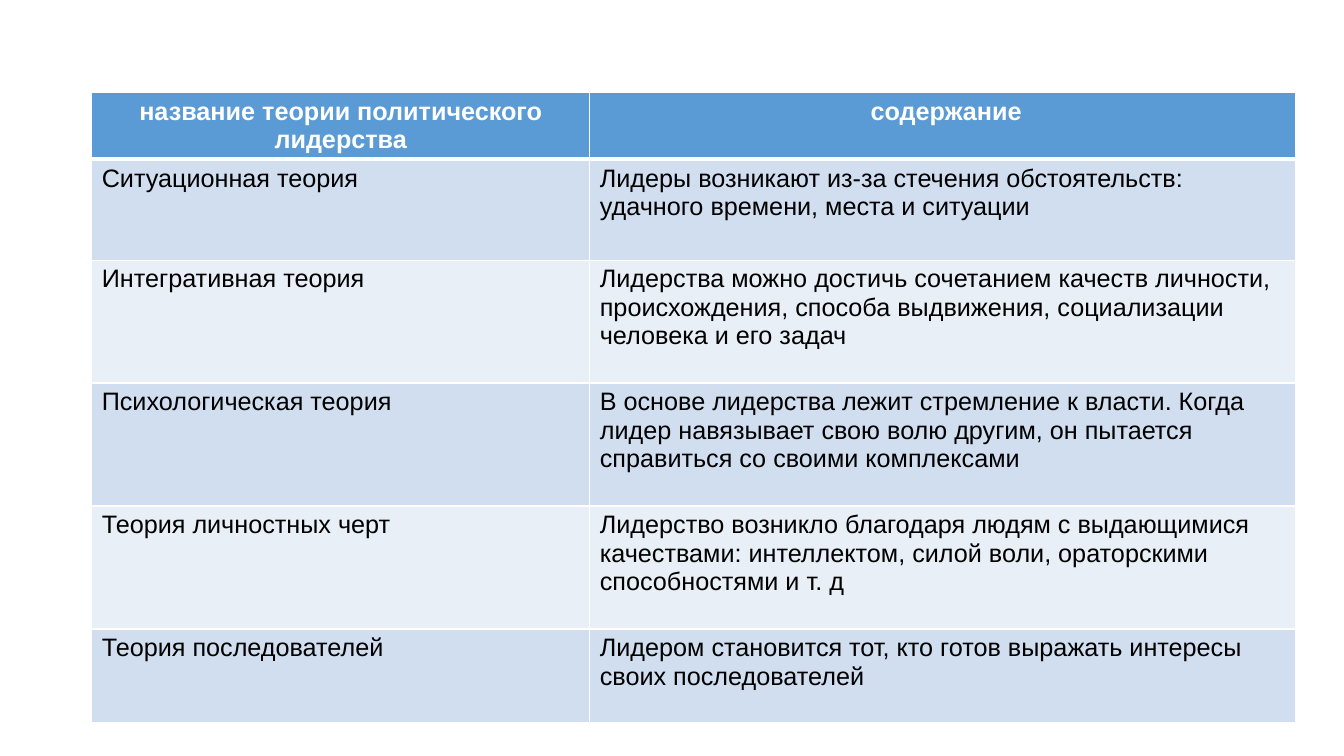
from dataclasses import dataclass

from lxml import etree
from pptx import Presentation
from pptx.dml.color import RGBColor
from pptx.enum.text import PP_ALIGN
from pptx.oxml.ns import qn
from pptx.util import Inches, Pt

LEFT, CENTER = PP_ALIGN.LEFT, PP_ALIGN.CENTER

COL_WIDTHS = [4.94, 7]
ROW_HEIGHTS = [0.65, 1, 1.22, 1.22, 1.22, 0.93]
THEORIES = [
    ("название теории политического лидерства", " содержание"),
    ("Ситуационная теория",
     "Лидеры возникают из-за стечения обстоятельств: удачного времени, места и ситуации"),
    ("Интегративная теория",
     "Лидерства можно достичь сочетанием качеств личности, происхождения, "
     "способа выдвижения, социализации человека и его задач"),
    ("Психологическая теория",
     "В основе лидерства лежит стремление к власти. Когда лидер навязывает "
     "свою волю другим, он пытается справиться со своими комплексами"),
    ("Теория личностных черт",
     "Лидерство возникло благодаря людям с выдающимися качествами: "
     "интеллектом, силой воли, ораторскими способностями и т. д"),
    ("Теория последователей",
     "Лидером становится тот, кто готов выражать интересы своих последователей"),
]


@dataclass(frozen=True)
class Theme:
    font: str = "Arial"
    size: int = 18
    header_fill: str = "5B9BD5"
    bands: tuple = ("D0DEEF", "E9EFF7")
    header_text: str = "FFFFFF"
    body_text: str = "000000"
    border: str = "FFFFFF"
    thin: int = 1
    thick: int = 3


class SlideBuilder:
    def __init__(self, slide, theme):
        self.s = slide
        self.theme = theme

    def table(self, left, top, col_widths, row_heights, rows):
        frame = self.s.shapes.add_table(
            len(rows), len(col_widths), Inches(left), Inches(top),
            Inches(sum(col_widths)), Inches(sum(row_heights)))
        table = frame.table
        for col, width in zip(table.columns, col_widths):
            col.width = Inches(width)
        for row, height in zip(table.rows, row_heights):
            row.height = Inches(height)
        for i, texts in enumerate(rows):
            for j, text in enumerate(texts):
                self.cell(table.cell(i, j), text, i)

    def cell(self, cell, text, row):
        t = self.theme
        header = row == 0
        fill = t.header_fill if header else t.bands[(row - 1) % 2]
        cell.fill.solid()
        cell.fill.fore_color.rgb = RGBColor.from_string(fill)

        # Text
        p = cell.text_frame.paragraphs[0]
        p.alignment = CENTER if header else LEFT
        r = p.add_run()
        r.text = text
        r.font.name = t.font
        r.font.size = Pt(t.size)
        r.font.bold = header
        r.font.color.rgb = RGBColor.from_string(t.header_text if header else t.body_text)

        # The rule under the header is thicker than the others
        self.borders(cell, top=t.thick if row == 1 else t.thin,
                     bottom=t.thick if header else t.thin)

    def borders(self, cell, top, bottom):
        thin = self.theme.thin
        props = cell._tc.get_or_add_tcPr()
        widths = {"a:lnL": thin, "a:lnR": thin, "a:lnT": top, "a:lnB": bottom}
        for i, (tag, width) in enumerate(widths.items()):
            line = etree.Element(qn(tag), w=str(Pt(width)))
            solid = etree.SubElement(line, qn("a:solidFill"))
            etree.SubElement(solid, qn("a:srgbClr"), val=self.theme.border)
            props.insert(i, line)


def main():
    prs = Presentation()
    prs.slide_width, prs.slide_height = Inches(13.33), Inches(7.5)
    slide = prs.slides.add_slide(prs.slide_layouts[6])

    # Table of leadership theories
    builder = SlideBuilder(slide, Theme())
    builder.table(0.91, 0.92, COL_WIDTHS, ROW_HEIGHTS, THEORIES)

    prs.save("out.pptx")


if __name__ == "__main__":
    main()
